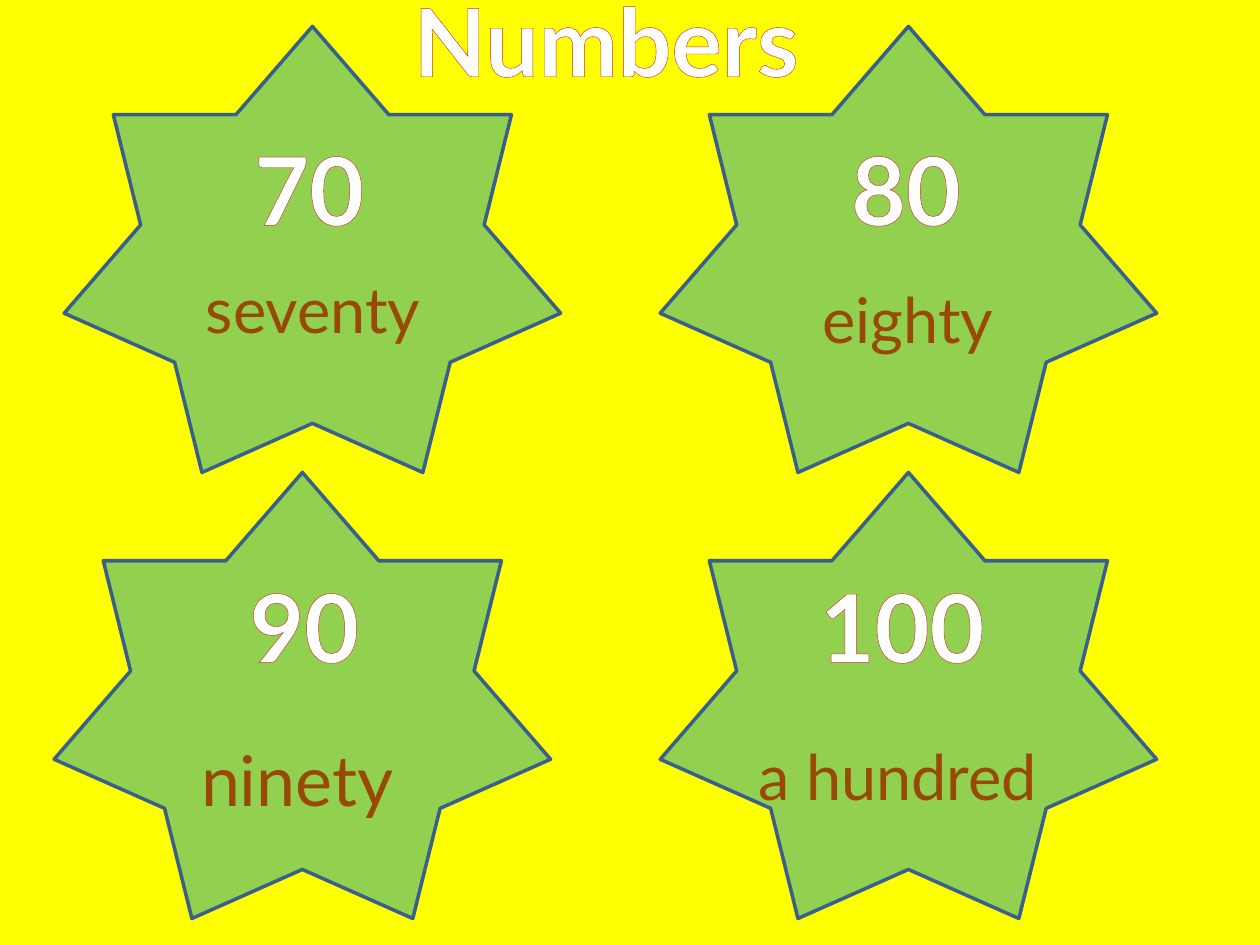
"""Build the Numbers slide: four stars, each with a number and its word."""
from lxml import etree
from pptx import Presentation
from pptx.dml.color import RGBColor
from pptx.enum.shapes import MSO_SHAPE
from pptx.enum.text import MSO_AUTO_SIZE, PP_ALIGN
from pptx.oxml.ns import qn
from pptx.util import Inches, Pt

COLORS = {
    "background": "FFFF00",
    "star": "92D050",
    "star_line": "3A5F8C",
    "number": "FFFFFF",
    "outline": "D02F2A",
    "word": "984807",
}


def rgb(name):
    return RGBColor.from_string(COLORS[name])


def add_text(slide, text, left, top, width, height, size, color, wrap):
    box = slide.shapes.add_textbox(Inches(left), Inches(top), Inches(width), Inches(height))
    tf = box.text_frame
    tf.word_wrap = wrap
    tf.auto_size = MSO_AUTO_SIZE.SHAPE_TO_FIT_TEXT
    p = tf.paragraphs[0]
    p.alignment = PP_ALIGN.CENTER
    p.font.name = "Lato"
    p.font.size = Pt(size)
    p.font.color.rgb = rgb(color)
    r = p.add_run()
    r.text = text
    return p, r


prs = Presentation()
prs.slide_width = Inches(10)
prs.slide_height = Inches(7.5)
slide = prs.slides.add_slide(prs.slide_layouts[6])
slide.background.fill.solid()
slide.background.fill.fore_color.rgb = rgb("background")

for left, top in [(0.51, 0.21), (0.43, 3.75), (5.24, 3.75), (5.24, 0.21)]:
    sp = slide.shapes.add_shape(
        MSO_SHAPE.STAR_7_POINT, Inches(left), Inches(top), Inches(3.94), Inches(3.54)
    )
    sp.shadow.inherit = False
    sp.fill.solid()
    sp.fill.fore_color.rgb = rgb("star")
    sp.line.color.rgb = rgb("star_line")
    sp.line.width = Pt(2)

outlined = [
    ("Numbers", 2.87, -0.19, 3.88),
    ("70", 1.74, 0.99, 1.43),
    ("90", 1.68, 4.46, 1.47),
    ("100", 6.24, 4.46, 1.84),
    ("80", 6.45, 0.99, 1.48),
]
for text, left, top, width in outlined:
    p, r = add_text(slide, text, left, top, width, 1.01, 54, "number", False)
    p.font.bold = True
    ln = etree.Element(qn("a:ln"), w=str(Pt(1.93)))
    fill = etree.SubElement(ln, qn("a:solidFill"))
    etree.SubElement(fill, qn("a:srgbClr"), val=COLORS["outline"])
    r._r.get_or_add_rPr().insert(0, ln)

words = [
    ("seventy", 0.83, 2.1, 3.31, 0.71, 36),
    ("eighty", 5.71, 2.18, 2.99, 0.71, 36),
    ("ninety", 0.98, 5.8, 2.76, 0.77, 40),
    ("a hundred", 5.55, 5.8, 3.15, 0.71, 36),
]
for text, left, top, width, height, size in words:
    add_text(slide, text, left, top, width, height, size, "word", True)

prs.save("out.pptx")
